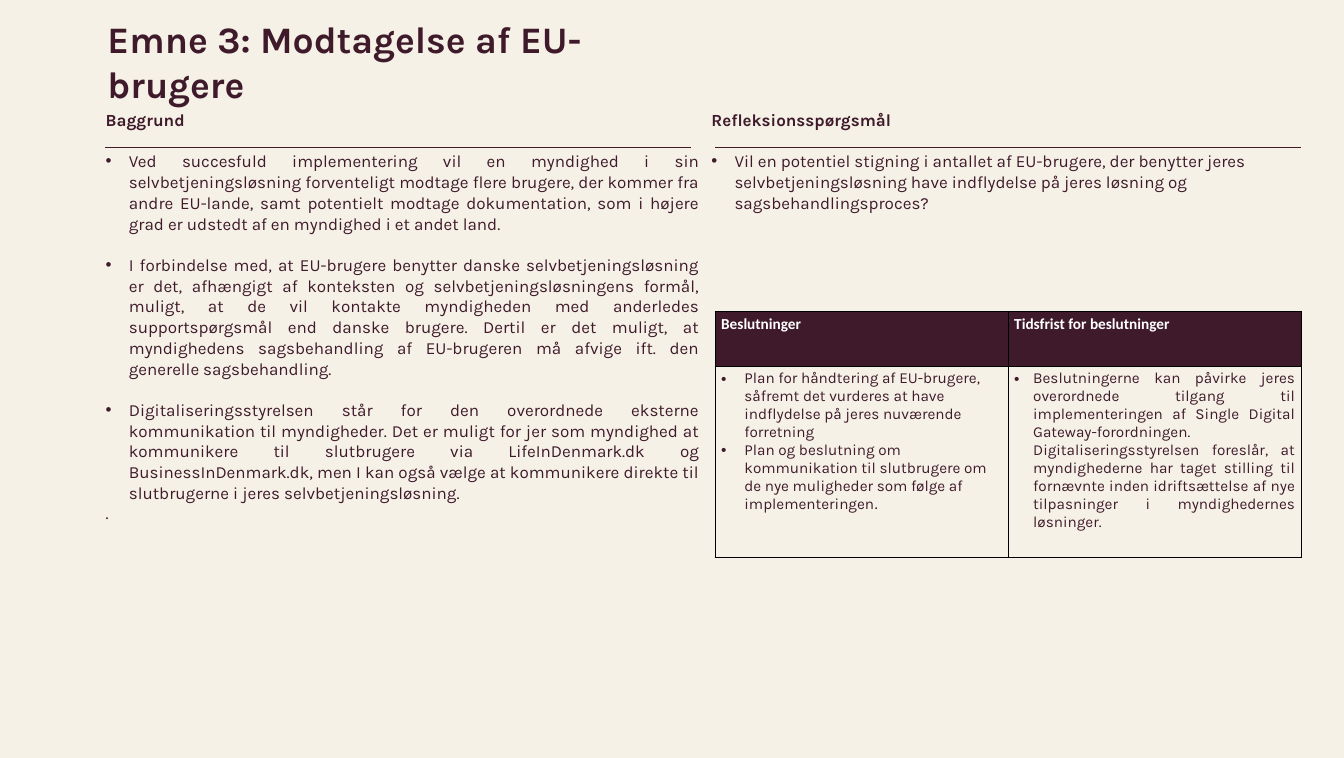
from lxml import etree
from pptx import Presentation
from pptx.dml.color import RGBColor
from pptx.enum.shapes import MSO_CONNECTOR
from pptx.enum.text import MSO_ANCHOR, PP_ALIGN
from pptx.oxml.ns import qn
from pptx.util import Inches, Pt

STRAIGHT = MSO_CONNECTOR.STRAIGHT
TOP = MSO_ANCHOR.TOP
LEFT, JUSTIFY = PP_ALIGN.LEFT, PP_ALIGN.JUSTIFY
COLORS = {"cream": "F5F1E6", "plum": "3F1A2B", "white": "FFFFFF", "black": "000000"}

BACKGROUND_POINTS = [
    "Ved succesfuld implementering vil en myndighed i sin selvbetjeningsløsning forventeligt modtage flere brugere, der kommer fra andre EU-lande, samt potentielt modtage dokumentation, som i højere grad er udstedt af en myndighed i et andet land.",
    "I forbindelse med, at EU-brugere benytter danske selvbetjeningsløsning er det, afhængigt af konteksten og selvbetjeningsløsningens formål, muligt, at de vil kontakte myndigheden med anderledes supportspørgsmål end danske brugere. Dertil er det muligt, at myndighedens sagsbehandling af EU-brugeren må afvige ift. den generelle sagsbehandling.",
    "Digitaliseringsstyrelsen står for den overordnede eksterne kommunikation til myndigheder. Det er muligt for jer som myndighed at kommunikere til slutbrugere via LifeInDenmark.dk og BusinessInDenmark.dk, men I kan også vælge at kommunikere direkte til slutbrugerne i jeres selvbetjeningsløsning.",
]
REFLECTION_POINTS = [
    "Vil en potentiel stigning i antallet af EU-brugere, der benytter jeres selvbetjeningsløsning have indflydelse på jeres løsning og sagsbehandlingsproces?",
]
HEADERS = ["Beslutninger", "Tidsfrist for beslutninger"]
DECISIONS = [
    "Plan for håndtering af EU-brugere, såfremt det vurderes at have indflydelse på jeres nuværende forretning",
    "Plan og beslutning om kommunikation til slutbrugere om de nye muligheder som følge af implementeringen",
]
DEADLINES = [
    "Beslutningerne kan påvirke jeres overordnede tilgang til implementeringen af Single Digital Gateway-forordningen. Digitaliseringsstyrelsen foreslår, at myndighederne har taget stilling til fornævnte inden idriftsættelse af nye tilpasninger i myndighedernes løsninger.",
]


def color(name):
    """Return the named colour."""
    return RGBColor.from_string(COLORS[name])


def add_text(paragraph, text, size=20, font="Karla", fill="plum", bold=False):
    """Append formatted text to a paragraph."""
    run = paragraph.add_run()
    run.text = text
    run.font.size = Pt(size)
    run.font.name = font
    run.font.bold = bold
    run.font.color.rgb = color(fill)


def set_bullet(paragraph, indent):
    """Give a paragraph a hanging bullet."""
    properties = paragraph._p.get_or_add_pPr()
    properties.set("marL", str(Inches(indent)))
    properties.set("indent", str(-Inches(indent)))
    etree.SubElement(properties, qn("a:buFont")).set("typeface", "Arial")
    etree.SubElement(properties, qn("a:buChar")).set("char", "•")


def add_frame(slide, left, top, width, height, margin_top=0.05):
    """Add a wrapping text box and return its text frame."""
    box = slide.shapes.add_textbox(Inches(left), Inches(top), Inches(width), Inches(height))
    frame = box.text_frame
    frame.word_wrap = True
    frame.vertical_anchor = TOP
    frame.margin_top = Inches(margin_top)
    return frame


def add_title(slide, left, top, width, height):
    """Add the slide title."""
    frame = add_frame(slide, left, top, width, height)
    add_text(frame.paragraphs[0], "Emne 3: Modtagelse af EU-brugere", size=44, bold=True)


def add_column(slide, left, top, width, height, heading, points, alignment, ending=""):
    """Add a heading with spaced bullet points below it."""
    frame = add_frame(slide, left, top, width, height, margin_top=0.72)
    paragraph = frame.paragraphs[0]
    paragraph.line_spacing = 1.02
    add_text(paragraph, heading, bold=True)
    for point in points:
        paragraph = frame.add_paragraph()
        paragraph.alignment = alignment
        paragraph.line_spacing = 1.02
        paragraph.space_before = Pt(24)
        set_bullet(paragraph, 0.38)
        add_text(paragraph, point)
    if ending:
        add_text(frame.add_paragraph(), ending)


def add_rule(slide, left, top, width):
    """Add a horizontal rule."""
    rule = slide.shapes.add_connector(
        STRAIGHT, Inches(left), Inches(top), Inches(left + width), Inches(top))
    rule.line.color.rgb = color("plum")
    rule.line.width = Pt(1.25)
    etree.SubElement(rule._element.spPr, qn("a:effectLst"))


def style_cell(cell, fill):
    """Fill a cell and draw its four borders."""
    cell.fill.solid()
    cell.fill.fore_color.rgb = color(fill)
    properties = cell._tc.get_or_add_tcPr()
    for position, side in enumerate(("lnL", "lnR", "lnT", "lnB")):
        border = etree.Element(qn(f"a:{side}"), w=str(Pt(1)))
        solid = etree.SubElement(border, qn("a:solidFill"))
        etree.SubElement(solid, qn("a:srgbClr")).set("val", COLORS["black"])
        properties.insert(position, border)


def fill_points(cell, points, indent, alignment):
    """Write bullet points into a cell and return the last paragraph."""
    frame = cell.text_frame
    for index, point in enumerate(points):
        paragraph = frame.add_paragraph() if index else frame.paragraphs[0]
        paragraph.alignment = alignment
        set_bullet(paragraph, indent)
        add_text(paragraph, point, size=18)
    return paragraph


def add_decision_table(slide, left, top, width, row_heights):
    """Add the table of decisions and their deadlines."""
    table = slide.shapes.add_table(
        2, 2, Inches(left), Inches(top), Inches(width), Inches(sum(row_heights))).table
    for row, height in zip(table.rows, row_heights):
        row.height = Inches(height)
    for column, header in enumerate(HEADERS):
        style_cell(table.cell(0, column), "plum")
        style_cell(table.cell(1, column), "cream")
        add_text(table.cell(0, column).text_frame.paragraphs[0], header,
                 size=18, font="Calibri", fill="white", bold=True)
    last_decision = fill_points(table.cell(1, 0), DECISIONS, 0.38, LEFT)
    add_text(last_decision, ".", size=18, font="Calibri")
    fill_points(table.cell(1, 1), DEADLINES, 0.31, JUSTIFY)


def main():
    """Build and save the slide."""
    presentation = Presentation()
    presentation.slide_width = Inches(21.99)
    presentation.slide_height = Inches(12.4)
    slide = presentation.slides.add_slide(presentation.slide_layouts[6])
    slide.background.fill.solid()
    slide.background.fill.fore_color.rgb = color("cream")
    add_title(slide, 1.66, 0.22, 9.58, 0.84)
    add_column(slide, 1.63, 1.07, 9.91, 5.05, "Baggrund", BACKGROUND_POINTS, JUSTIFY, ending=".")
    add_column(slide, 11.54, 1.07, 9.91, 5.05, "Refleksionsspørgsmål", REFLECTION_POINTS, LEFT)
    for left in (1.72, 11.7):
        add_rule(slide, left, 2.42, 9.59)
    add_decision_table(slide, 11.7, 5.1, 9.59, (0.9, 3.11))
    presentation.save("out.pptx")


if __name__ == "__main__":
    main()
